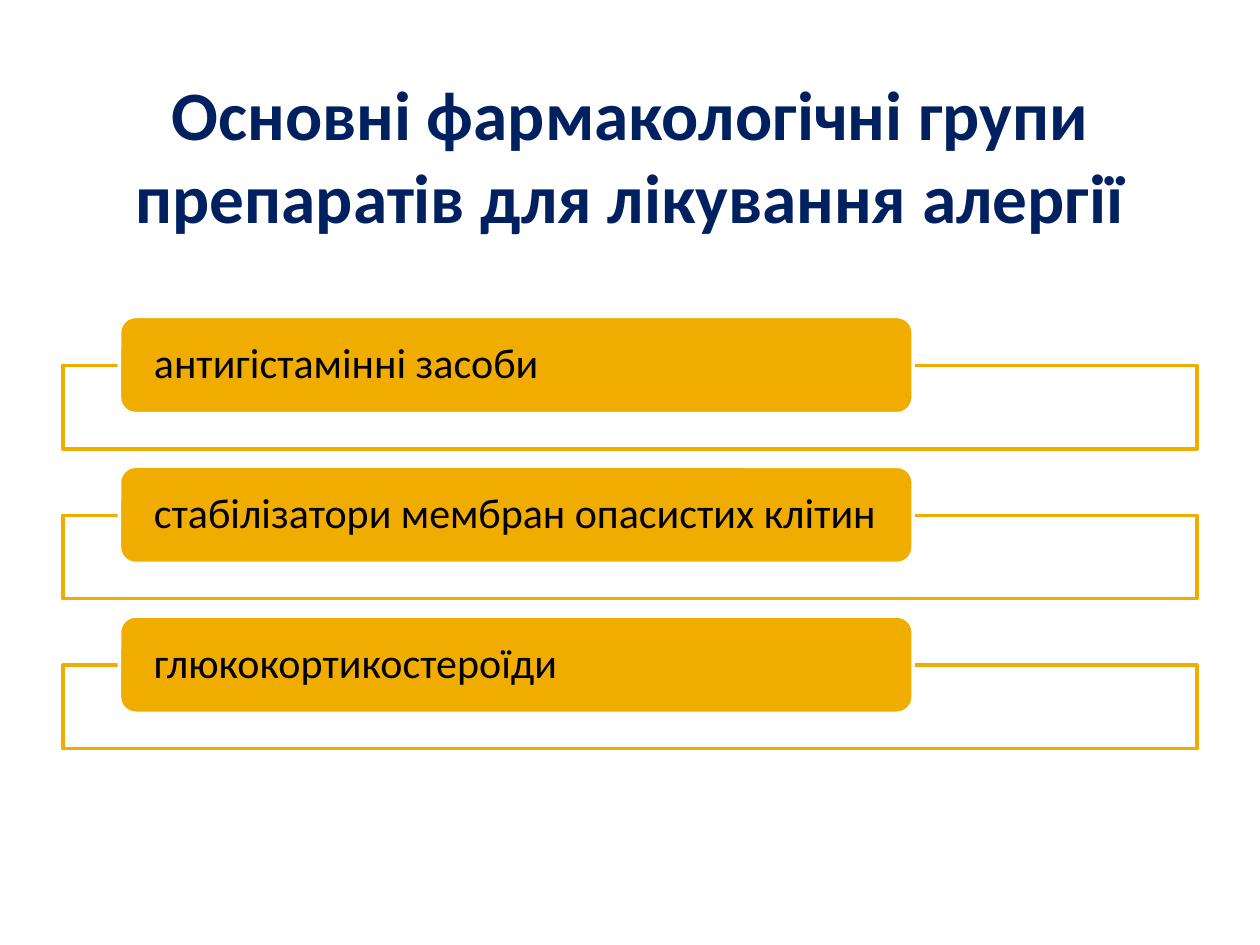
from lxml.etree import SubElement
from pptx import Presentation
from pptx.dml.color import RGBColor
from pptx.enum.shapes import MSO_SHAPE
from pptx.enum.text import MSO_ANCHOR, MSO_AUTO_SIZE, PP_ALIGN
from pptx.oxml.ns import qn
from pptx.util import Cm, Pt

HEADING = "Основні фармакологічні групи препаратів для лікування алергії"
DRUG_GROUPS = [
    "антигістамінні засоби",
    "стабілізатори мембран опасистих клітин",
    "глюкокортикостероїди",
]
COLORS = {"heading": "002060", "amber": "F0AD00", "white": "FFFFFF", "text": "000000"}
FRAME_LEFT, FRAME_WIDTH, FRAME_HEIGHT = 1.27, 22.86, 1.68
LABEL_LEFT, LABEL_WIDTH, LABEL_HEIGHT = 2.41, 16, 1.96
FIRST_LABEL_TOP, FRAME_DROP, ROW_STEP = 6.38, 0.99, 3.02


def rgb(name):
    return RGBColor.from_string(COLORS[name])


def write(holder, text, *, size, color, bold=False, align=PP_ALIGN.LEFT,
          side_inset=0.25, line_spacing=1.0):
    """Put formatted, vertically centred text into a shape."""
    frame = holder.text_frame
    frame.word_wrap = True
    frame.auto_size = MSO_AUTO_SIZE.NONE
    frame.vertical_anchor = MSO_ANCHOR.MIDDLE
    frame.margin_left = frame.margin_right = Cm(side_inset)
    frame.margin_top = frame.margin_bottom = 0
    frame.text = text
    paragraph = frame.paragraphs[0]
    paragraph.alignment = align
    paragraph.line_spacing = line_spacing
    font = paragraph.runs[0].font
    font.name, font.size, font.bold = "Calibri", Pt(size), bold
    font.color.rgb = rgb(color)


def add_box(slide, preset, left, top, width, height, fill, line):
    box = slide.shapes.add_shape(preset, Cm(left), Cm(top), Cm(width), Cm(height))
    box.shadow.inherit = False
    box.fill.solid()
    box.fill.fore_color.rgb = rgb(fill)
    box.line.color.rgb = rgb(line)
    box.line.width = Pt(2)
    return box


def main():
    presentation = Presentation()
    presentation.slide_width, presentation.slide_height = Cm(25.4), Cm(19.05)
    slide = presentation.slides.add_slide(presentation.slide_layouts[5])

    heading = slide.shapes.title
    heading.left, heading.top = Cm(1.27), Cm(1.52)
    heading.width, heading.height = Cm(22.86), Cm(3.18)
    write(heading, HEADING, size=39.6, color="heading", bold=True, align=PP_ALIGN.CENTER)

    for row, drug_group in enumerate(DRUG_GROUPS):
        label_top = FIRST_LABEL_TOP + row * ROW_STEP
        frame = add_box(slide, MSO_SHAPE.RECTANGLE, FRAME_LEFT, label_top + FRAME_DROP,
                        FRAME_WIDTH, FRAME_HEIGHT, "white", "amber")
        frame_color = frame.fill._xPr.find(qn("a:solidFill"))[0]
        SubElement(frame_color, qn("a:alpha"), val="90000")
        label = add_box(slide, MSO_SHAPE.ROUNDED_RECTANGLE, LABEL_LEFT, label_top,
                        LABEL_WIDTH, LABEL_HEIGHT, "amber", "white")
        write(label, drug_group, size=24, color="text", side_inset=0.6, line_spacing=0.9)

    presentation.save("out.pptx")


if __name__ == "__main__":
    main()
